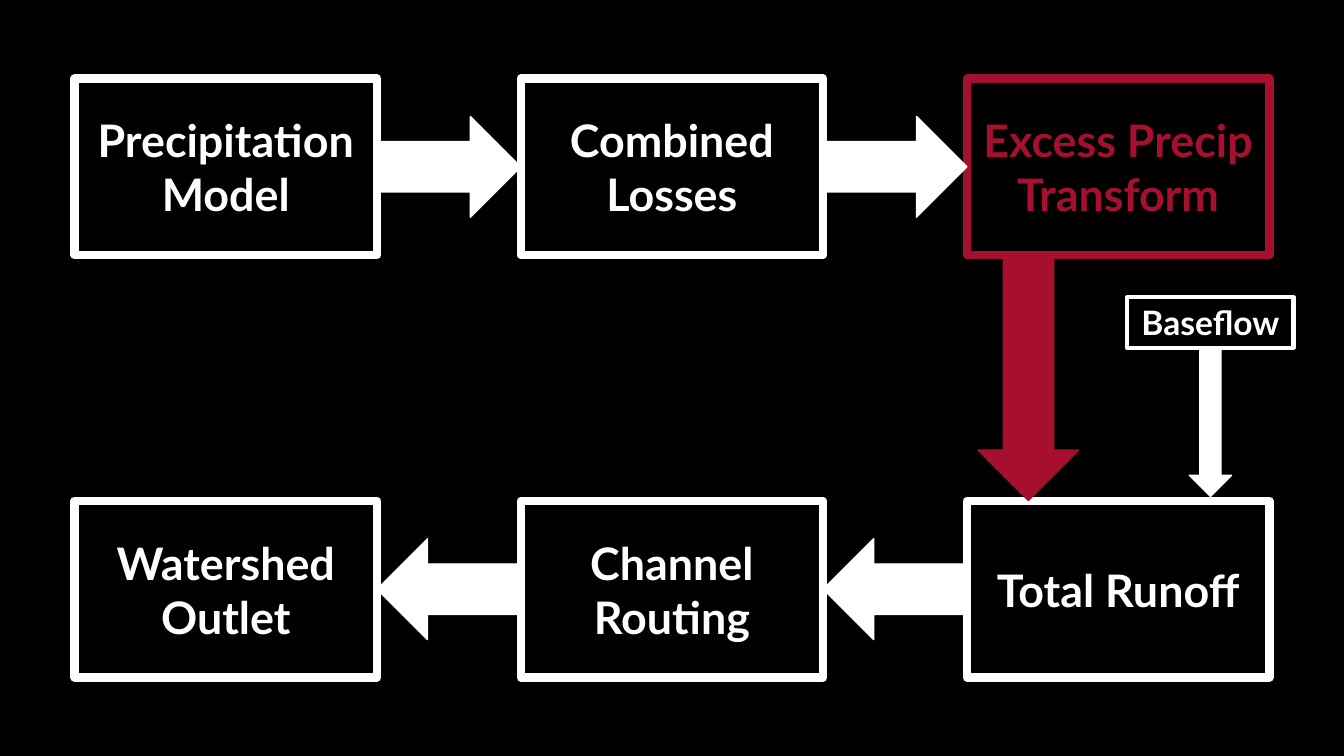
from pptx import Presentation
from pptx.dml.color import RGBColor
from pptx.enum.shapes import MSO_SHAPE
from pptx.enum.text import MSO_ANCHOR, MSO_AUTO_SIZE, PP_ALIGN
from pptx.util import Inches, Pt

# Content: each row reads left to right, the flow turns back in the second
STEPS = [
    [("Precipitation Model", "white"), ("Combined Losses", "white"),
     ("Excess Precip Transform", "red")],
    [("Watershed Outlet", "white"), ("Channel Routing", "white"),
     ("Total Runoff", "white")],
]
TURNS = [0, 180]
SIDE = "Baseflow"
HEX = {"black": "000000", "white": "FFFFFF", "red": "A60F2D"}

# Grid, in inches
WIDE, HIGH = 13.33, 7.5
LEFT, TOP = 0.74, 0.78
BOX_W, BOX_H = 3, 1.75
COL, ROW = 4.425, 4.19
GAP = COL - BOX_W
THICK = 1
SIDE_BOX = (11.18, 2.95, 1.65, 0.5)

deck = Presentation()
deck.slide_width, deck.slide_height = Inches(WIDE), Inches(HIGH)
slide = deck.slides.add_slide(deck.slide_layouts[6])


def tint(name):
    return RGBColor.from_string(HEX[name])


def paint(fill, name):
    fill.solid()
    fill.fore_color.rgb = tint(name)


def edge(shape, name, width):
    paint(shape.line.fill, name)
    shape.line.width = Pt(width)


def label(shape, text, name, size):
    frame = shape.text_frame
    para = frame.paragraphs[0]
    para.alignment = PP_ALIGN.CENTER
    run = para.add_run()
    run.text = text
    look = {"name": "Lato", "size": Pt(size), "bold": True}
    for key, value in look.items():
        setattr(run.font, key, value)
    run.font.color.rgb = tint(name)
    return frame


def add_box(text, name, x, y):
    area = map(Inches, (x, y, BOX_W, BOX_H))
    box = slide.shapes.add_shape(MSO_SHAPE.RECTANGLE, *area)
    box.shadow.inherit = False
    box.fill.background()
    edge(box, name, 6)
    frame = label(box, text, name, 32)
    frame.word_wrap = True
    frame.vertical_anchor = MSO_ANCHOR.MIDDLE


def add_arrow(x, y, span, thick, turn, name):
    """Place an arrow by its centre, then turn it."""
    area = map(Inches, (x - span / 2, y - thick / 2, span, thick))
    arrow = slide.shapes.add_shape(MSO_SHAPE.RIGHT_ARROW, *area)
    arrow.shadow.inherit = False
    arrow.rotation = turn
    paint(arrow.fill, name)
    edge(arrow, name, 1)


# Background
paint(slide.background.fill, "black")

# Step boxes
for row, steps in enumerate(STEPS):
    for col, (text, name) in enumerate(steps):
        add_box(text, name, LEFT + col * COL, TOP + row * ROW)

# Arrows across each row
for row, turn in enumerate(TURNS):
    for col in range(len(STEPS[row]) - 1):
        add_arrow(LEFT + col * COL + BOX_W + GAP / 2,
                  TOP + row * ROW + BOX_H / 2, GAP, THICK, turn, "white")

# Side input
side = slide.shapes.add_textbox(*map(Inches, SIDE_BOX))
edge(side, "white", 3)
frame = label(side, SIDE, "white", 24)
frame.word_wrap = True
frame.auto_size = MSO_AUTO_SIZE.SHAPE_TO_FIT_TEXT

# Arrows down to the second row
x, y, w, h = SIDE_BOX
low = TOP + ROW
high = TOP + BOX_H
add_arrow(10.2, (high + low) / 2 + 0.02, 2.39, THICK, 90, "red")
add_arrow(x + w / 2, (y + h + low) / 2 - 0.02, 1.47, 0.42, 90, "white")

deck.save("out.pptx")
